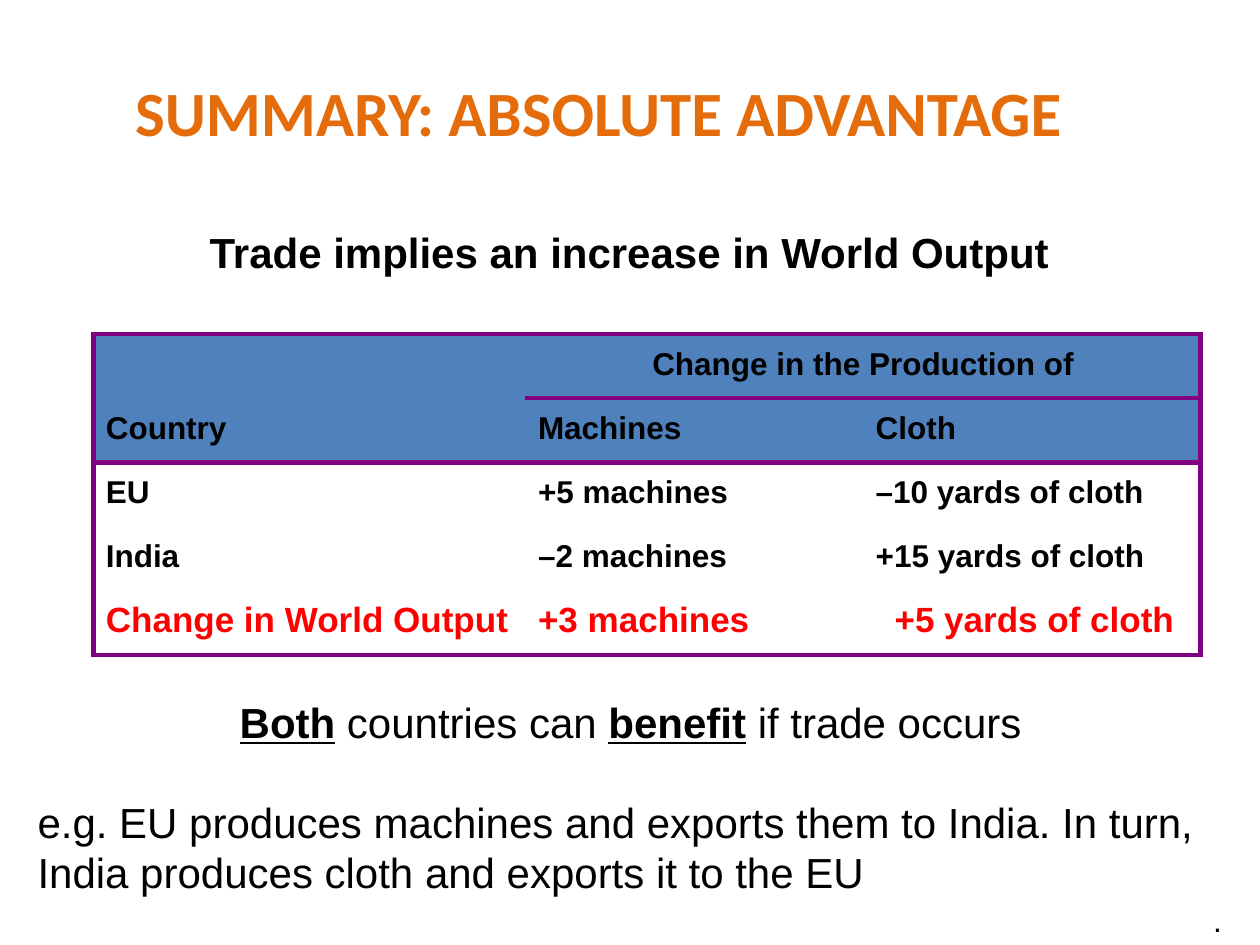
from typing import NamedTuple

from pptx import Presentation
from pptx import util as u
from pptx.dml.color import RGBColor
from pptx.enum import text
from pptx.oxml import parse_xml
from pptx.oxml.ns import nsdecls

BLACK, RED, ORANGE = "000000", "FF0000", "E46C0A"
PURPLE, BLUE = "800080", "4F81BD"
CENTER, LEFT = text.PP_ALIGN.CENTER, text.PP_ALIGN.LEFT


class Row(NamedTuple):
    cells: tuple[str, str, str]
    size: int = 18
    color: str = BLACK
    fill: str | None = None


class Note(NamedTuple):
    place: tuple[float, float, float, float]
    words: str
    bold: bool = False
    size: int = 24
    align: text.PP_ALIGN = LEFT
    wrap: bool = True


ROWS = [
    Row(("", "Change in the Production of", ""), fill=BLUE),
    Row(("Country", "Machines", "Cloth"), fill=BLUE),
    Row(("EU", "+5 machines", "–10 yards of cloth")),
    Row(("India", "–2 machines", "+15 yards of cloth")),
    Row(("Change in World Output", "+3 machines", "+5 yards of cloth"), 20, RED),
]
COLUMN_WIDTHS = (3.43, 2.68, 2.68)
ROW_HEIGHT = 0.51

NOTES = [
    Note((9.53, 7.1, 0.27, 0.4), ".", size=18, wrap=False),
    Note((1.38, 1.75, 7.23, 0.5), "Trade implies an increase in World Output",
         bold=True, align=CENTER),
]
BENEFIT = [("Both", True), (" countries can ", False),
           ("benefit", True), (" if trade occurs", False)]
EXAMPLE = ("e.g. EU produces machines and exports them to India. "
           "In turn, India produces cloth and exports it to the EU")


def rgb(value: str) -> RGBColor:
    return RGBColor.from_string(value)


def add_text(para, words: str, *, size=24, color=BLACK, font="Arial",
             bold=False, underline=False, align=LEFT) -> None:
    para.alignment = align
    span = para.add_run()
    span.text = words
    span.font.size = u.Pt(size)
    span.font.name = font
    span.font.bold = bold
    span.font.underline = underline
    span.font.color.rgb = rgb(color)


def add_box(slide, place: tuple[float, float, float, float], wrap=True):
    box = slide.shapes.add_textbox(*map(u.Inches, place))
    box.text_frame.word_wrap = wrap
    return box.text_frame


def set_borders(cell, drawn: dict[str, bool]) -> None:
    """Draw the marked sides in purple and hide the others."""
    properties = cell._tc.get_or_add_tcPr()
    for side in "LRTB":
        paint = (f'<a:solidFill><a:srgbClr val="{PURPLE}"/></a:solidFill>'
                 if drawn[side] else "<a:noFill/>")
        properties.append(parse_xml(
            f'<a:ln{side} {nsdecls("a")} w="{u.Pt(3)}">{paint}</a:ln{side}>'))


def add_output_table(slide) -> None:
    last_row, last_column = len(ROWS) - 1, len(COLUMN_WIDTHS) - 1
    table = slide.shapes.add_table(
        len(ROWS), len(COLUMN_WIDTHS), u.Inches(0.74), u.Inches(2.65),
        u.Inches(sum(COLUMN_WIDTHS)), u.Inches(ROW_HEIGHT * len(ROWS))).table
    table.first_row = table.horz_banding = False
    for column, width in zip(table.columns, COLUMN_WIDTHS):
        column.width = u.Inches(width)
    table.cell(0, 1).merge(table.cell(0, 2))

    for r, row in enumerate(ROWS):
        table.rows[r].height = u.Inches(ROW_HEIGHT)
        for c, words in enumerate(row.cells):
            cell = table.cell(r, c)
            set_borders(cell, {
                "L": c == 0,
                "R": c == last_column or cell.is_merge_origin,
                "T": r in (0, 2) or (r == 1 and c > 0),
                "B": r in (1, last_row) or (r == 0 and c > 0),
            })
            if row.fill:
                cell.fill.solid()
                cell.fill.fore_color.rgb = rgb(row.fill)
            else:
                cell.fill.background()
            cell.vertical_anchor = text.MSO_ANCHOR.MIDDLE
            if not words:
                continue
            para = cell.text_frame.paragraphs[0]
            para.line_spacing = 0.85
            para.space_before = u.Pt(row.size * 0.2)
            add_text(para, words, size=row.size, color=row.color, bold=True,
                     align=CENTER if cell.is_merge_origin else LEFT)
    table.cell(last_row, last_column).margin_left = u.Inches(0.25)


def add_title(slide) -> None:
    title = slide.shapes.title
    title.left, title.top = u.Inches(0), u.Inches(0.37)
    title.width, title.height = u.Inches(9.5), u.Inches(0.86)
    title.text_frame.vertical_anchor = text.MSO_ANCHOR.BOTTOM
    add_text(title.text_frame.paragraphs[0], "SUMMARY: ABSOLUTE ADVANTAGE",
             size=36, color=ORANGE, font="Calibri", bold=True, align=CENTER)


def add_conclusion(slide) -> None:
    frame = add_box(slide, (0.2, 5.48, 9.61, 2.02))
    for words, stressed in BENEFIT:
        add_text(frame.paragraphs[0], words, bold=stressed,
                 underline=stressed, align=CENTER)
    example = frame.add_paragraph()
    example.space_before = u.Pt(28)
    add_text(example, EXAMPLE)


def main() -> None:
    deck = Presentation()
    deck.slide_width, deck.slide_height = u.Inches(10), u.Inches(7.5)
    slide = deck.slides.add_slide(deck.slide_layouts[5])
    add_title(slide)
    add_output_table(slide)
    for note in NOTES:
        frame = add_box(slide, note.place, note.wrap)
        add_text(frame.paragraphs[0], note.words, size=note.size,
                 bold=note.bold, align=note.align)
    add_conclusion(slide)
    deck.save("out.pptx")


if __name__ == "__main__":
    main()
